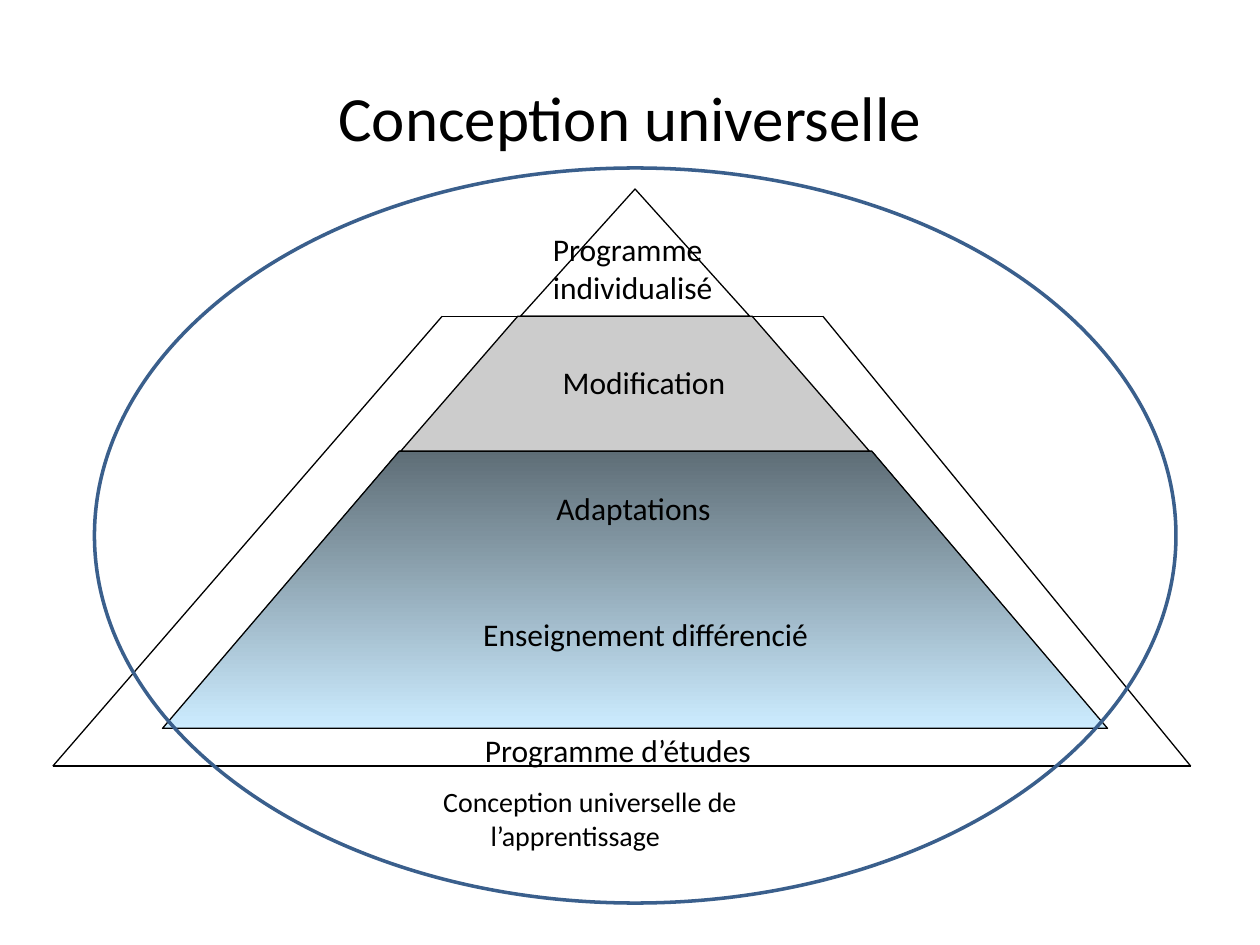
from pptx import Presentation
from pptx import util as u
from pptx.dml.color import RGBColor
from pptx.enum import shapes, text
from pptx.oxml.ns import qn
from lxml import etree

TOP, MID, LOW, BASE = 180.7, 257.8, 416.2, 437.8
LEFT = text.PP_ALIGN.LEFT
MIDDLE = text.PP_ALIGN.CENTER


def rgb(code):
    return RGBColor.from_string(code)


def edge(line, code="000000", width=0.75):
    line.color.rgb = rgb(code)
    line.width = u.Pt(width)


def rule(slide, start, end):
    ends = [u.Pt(v) for v in (*start, *end)]
    line = slide.shapes.add_connector(shapes.MSO_CONNECTOR.STRAIGHT, *ends)
    edge(line.line)
    etree.SubElement(line._element.spPr, qn("a:effectLst"))


def outline(slide, kind, box, code="000000", width=0.75):
    shape = slide.shapes.add_shape(kind, *[u.Pt(v) for v in box])
    shape.shadow.inherit = False
    shape.fill.background()
    edge(shape.line, code, width)


def band(slide, points, *codes):
    first, *rest = [(u.Pt(x), u.Pt(y)) for x, y in points]
    form = slide.shapes.build_freeform(*first, scale=1)
    form.add_line_segments(rest, close=True)
    shape = form.convert_to_shape()
    shape.shadow.inherit = False
    edge(shape.line)
    if len(codes) == 1:
        shape.fill.solid()
        shape.fill.fore_color.rgb = rgb(codes[0])
        return
    shape.fill.gradient()
    shape.fill.gradient_angle = 90
    for stop, code in zip(shape.fill.gradient_stops, codes):
        stop.color.rgb = rgb(code)


def label(slide, lines, box, size=18, align=MIDDLE, hang=0,
          anchor=text.MSO_ANCHOR.TOP):
    frame = slide.shapes.add_textbox(*[u.Pt(v) for v in box]).text_frame
    frame.word_wrap = True
    frame.vertical_anchor = anchor
    for i, words in enumerate(lines):
        para = frame.add_paragraph() if i else frame.paragraphs[0]
        para.alignment = align
        if hang:
            props = para._p.get_or_add_pPr()
            props.set("marL", str(u.Pt(hang)))
            props.set("indent", str(-u.Pt(hang)))
        run = para.add_run()
        run.text = words
        run.font.name = "Calibri"
        run.font.size = u.Pt(size)
        run.font.color.rgb = rgb("000000")


def main():
    deck = Presentation()
    deck.slide_width, deck.slide_height = u.Pt(720), u.Pt(540)
    slide = deck.slides.add_slide(deck.slide_layouts[6])

    label(slide, ["Conception universelle"], (36, 21.6, 648, 90), 36,
          anchor=text.MSO_ANCHOR.MIDDLE)
    label(slide, ["Conception universelle de l’apprentissage"],
          (246.2, 445, 275, 38), 16, LEFT, hang=27)

    frame = [(300.2, TOP), (252.7, TOP), (30.2, BASE),
             (680.4, BASE), (470.2, TOP), (426.2, TOP)]
    for start, end in zip(frame, frame[1:]):
        rule(slide, start, end)

    band(slide, [(92.9, LOW), (228.2, MID), (498.2, MID), (632.9, LOW)],
         "CCECFF", "5E6D76")
    outline(slide, shapes.MSO_SHAPE.ISOSCELES_TRIANGLE,
            (297.4, 108, 131, TOP - 108))
    band(slide, [(229, MID), (295.9, TOP), (429.8, TOP), (496.8, MID)],
         "CCCCCC")

    label(slide, ["Programme", "individualisé"], (308.9, 128, 130, 52),
          align=LEFT)
    tiers = [("Modification", 306, 124), ("Adaptations", 300, 124),
             ("Enseignement différencié", 240, 258)]
    for i, (words, left, width) in enumerate(tiers):
        label(slide, [words], (left, 204 + 72 * i, width, 29))
    label(slide, ["Programme d’études"], (270, 414, 192, 29), align=LEFT)

    outline(slide, shapes.MSO_SHAPE.OVAL, (54, 96, 618, 420), "3A5F8C", 2)
    deck.save("out.pptx")


if __name__ == "__main__":
    main()
